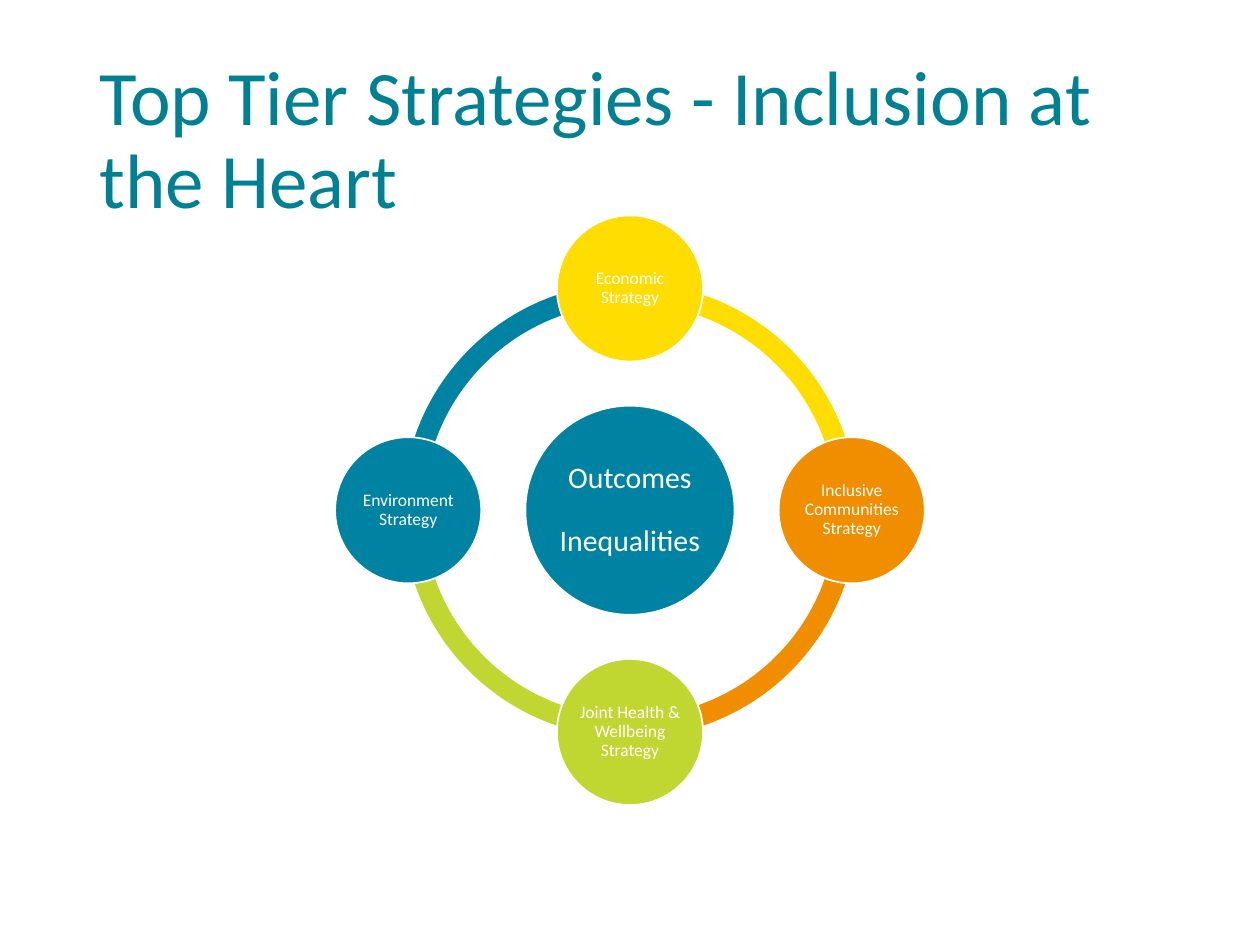
import math
from dataclasses import dataclass

import pptx
import pptx.dml.color
import pptx.enum.shapes
import pptx.enum.text
import pptx.util

MSO_SHAPE = pptx.enum.shapes.MSO_SHAPE
ANCHOR = pptx.enum.text.MSO_ANCHOR
ALIGN = pptx.enum.text.PP_ALIGN

WIDTH, HEIGHT = pptx.util.Inches(10), pptx.util.Inches(7.5)
# Lengths below are percentages of the slide's width.
CENTRE_X, CENTRE_Y = 50, 40.5
ORBIT = 17.6
RING_SIZE = 36.1
RING_THICKNESS = 0.046
QUARTER_TURN = 54  # 90 degrees in block arc adjustment units
FULL_TURN = 4 * QUARTER_TURN
TEAL, YELLOW, ORANGE, GREEN = "0082A3", "FFDD00", "F18E00", "BFD730"
WHITE, TITLE_COLOUR = "FFFFFF", "008093"


@dataclass
class Strategy:
    name: str
    colour: str


# Clockwise from the top
STRATEGIES = [
    Strategy("Economic Strategy", YELLOW),
    Strategy("Inclusive Communities Strategy", ORANGE),
    Strategy("Joint Health & Wellbeing Strategy", GREEN),
    Strategy("Environment Strategy", TEAL),
]


def share(value: float) -> int:
    return round(WIDTH * value / 100)


def rgb(colour: str):
    return pptx.dml.color.RGBColor.from_string(colour)


def write(sp, lines: list[str], size: float, colour: str, align, inset: float, gap: float = 0):
    """Fill a shape with one paragraph per line, gap points apart."""
    tf = sp.text_frame
    frame = {"word_wrap": True, "vertical_anchor": ANCHOR.MIDDLE}
    frame |= {f"margin_{side}": share(inset) for side in ("left", "right", "top", "bottom")}
    for name, value in frame.items():
        setattr(tf, name, value)
    for i, line in enumerate(lines):
        p = tf.add_paragraph() if i else tf.paragraphs[0]
        p.alignment, p.line_spacing = align, 0.9
        p.space_before = pptx.util.Pt(gap if i else 0)
        r = p.add_run()
        r.text = line
        for name, value in {"name": "Calibri", "size": pptx.util.Pt(size)}.items():
            setattr(r.font, name, value)
        r.font.color.rgb = rgb(colour)


def add_round(slide, kind, x: float, y: float, size: float, colour: str):
    """Add a filled square-framed shape centred on x, y."""
    left, top = share(x - size / 2), share(y - size / 2)
    sp = slide.shapes.add_shape(kind, left, top, share(size), share(size))
    sp.shadow.inherit = False
    sp.fill.solid()
    sp.fill.fore_color.rgb = rgb(colour)
    return sp


def add_arc(slide, index: int, colour: str):
    """Add the quarter of the ring that leads clockwise from a strategy."""
    sp = add_round(slide, MSO_SHAPE.BLOCK_ARC, CENTRE_X, CENTRE_Y, RING_SIZE, colour)
    sp.line.fill.background()
    angles = [(index + step) * QUARTER_TURN % FULL_TURN for step in (-1, 0)]
    for i, value in enumerate([*angles, RING_THICKNESS]):
        sp.adjustments[i] = value


def add_circle(slide, x: float, y: float, size: float, colour: str,
               lines: list[str], points: float, inset: float, gap: float = 0):
    sp = add_round(slide, MSO_SHAPE.OVAL, x, y, size, colour)
    sp.line.color.rgb = rgb(WHITE)
    sp.line.width = pptx.util.Pt(1)
    write(sp, lines, points, WHITE, ALIGN.CENTER, inset, gap)


def main():
    prs = pptx.Presentation()
    prs.slide_width, prs.slide_height = WIDTH, HEIGHT
    slide = prs.slides.add_slide(prs.slide_layouts[6])

    for i, strategy in reversed(list(enumerate(STRATEGIES))):
        add_arc(slide, i, strategy.colour)
    add_circle(slide, CENTRE_X, CENTRE_Y, 16.6, TEAL,
               ["Outcomes", "Inequalities"], 17, 0.2, gap=18)
    for i, strategy in enumerate(STRATEGIES):
        angle = math.tau * i / len(STRATEGIES)
        x = CENTRE_X + ORBIT * math.sin(angle)
        y = CENTRE_Y - ORBIT * math.cos(angle)
        add_circle(slide, x, y, 11.6, strategy.colour, [strategy.name], 10, 0.1)

    title = slide.shapes.add_textbox(*map(share, (6.9, 4, 86.2, 14.5)))
    write(title, ["Top Tier Strategies - Inclusion at the Heart"], 44,
          TITLE_COLOUR, ALIGN.LEFT, 1)
    prs.save("out.pptx")


if __name__ == "__main__":
    main()
